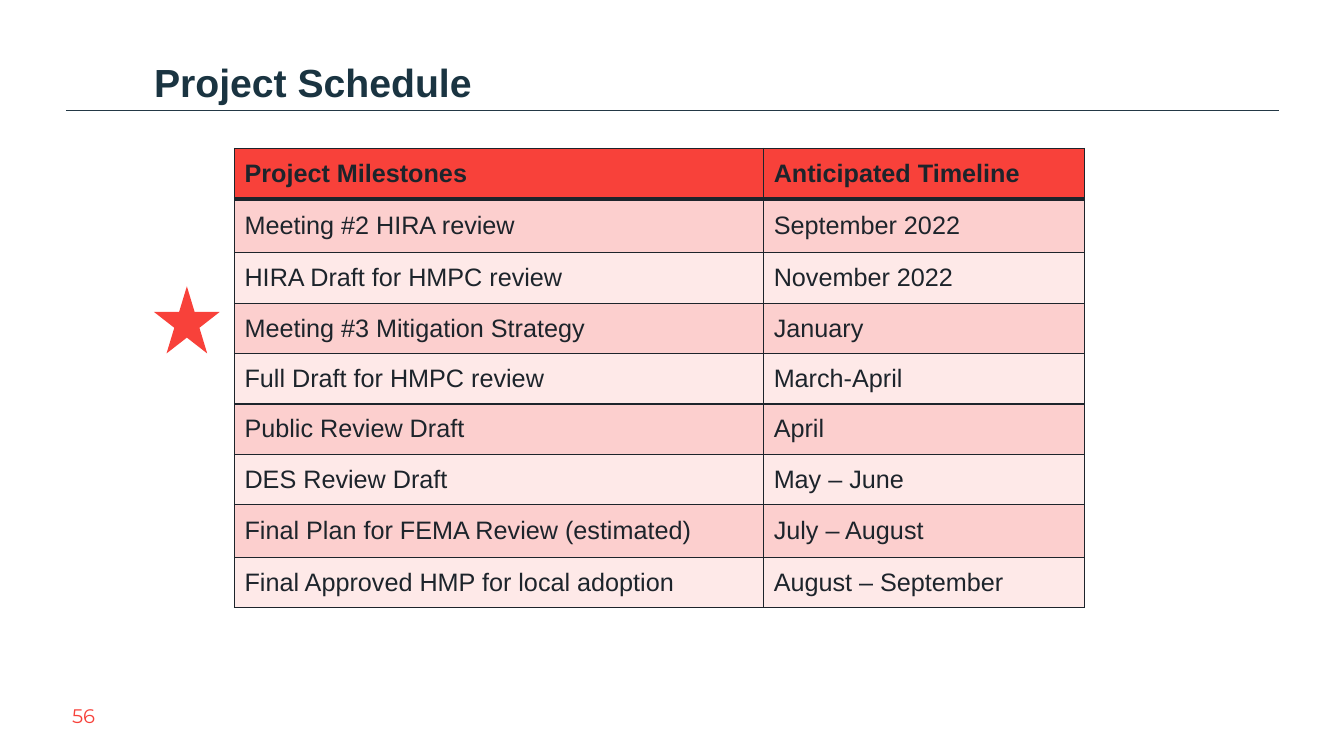
"""Builds the project schedule slide with its milestone table."""
from dataclasses import dataclass

from lxml import etree
from pptx import Presentation
from pptx.dml.color import RGBColor
from pptx.enum.shapes import MSO_CONNECTOR, MSO_SHAPE
from pptx.enum.text import MSO_ANCHOR, MSO_AUTO_SIZE, PP_ALIGN
from pptx.oxml.ns import qn
from pptx.util import Pt

STRAIGHT = MSO_CONNECTOR.STRAIGHT
STAR = MSO_SHAPE.STAR_5_POINT
MIDDLE, BOTTOM = MSO_ANCHOR.MIDDLE, MSO_ANCHOR.BOTTOM
LEFT, CENTER = PP_ALIGN.LEFT, PP_ALIGN.CENTER
NO_FIT = MSO_AUTO_SIZE.NONE

ROWS = [
    ("Project Milestones", "Anticipated Timeline"),
    ("Meeting #2 HIRA review", "September 2022"),
    ("HIRA Draft for HMPC review", "November 2022"),
    ("Meeting #3 Mitigation Strategy", "January"),
    ("Full Draft for HMPC review", "March-April"),
    ("Public Review Draft", "April"),
    ("DES Review Draft", "May – June"),
    ("Final Plan for FEMA Review (estimated)", "July – August"),
    ("Final Approved HMP for local adoption", "August – September"),
]
COL_WIDTHS = [378, 229]
ROW_HEIGHTS = [36, 38.6, 36, 36, 36, 36, 36, 37.6, 36]


@dataclass(frozen=True)
class Theme:
    """Colours, fonts and type sizes of the slide."""
    title: str = "1A3441"
    rule: str = "233845"
    ink: str = "1D242B"
    accent: str = "F8413A"
    number: str = "F7413A"
    bands: tuple = ("FEE9E8", "FCCFCE")
    font: str = "Arial"
    number_font: str = "Montserrat"
    title_size: int = 28
    table_size: int = 18
    number_size: int = 14


class Deck:
    """Draws themed elements on the current slide, measured in points."""

    def __init__(self, prs, theme):
        """Adds a title-only slide."""
        self.t = theme
        self.s = prs.slides.add_slide(prs.slide_layouts[5])

    def run(self, p, text, size, color, font, bold=False):
        """Adds one formatted run to a paragraph."""
        r = p.add_run()
        r.text = text
        r.font.size, r.font.name, r.font.bold = Pt(size), font, bold
        r.font.color.rgb = RGBColor.from_string(color)

    def title(self, text, x, y, w, h):
        """Places and fills the title placeholder."""
        sp = self.s.shapes.title
        sp.left, sp.top, sp.width, sp.height = Pt(x), Pt(y), Pt(w), Pt(h)
        tf = sp.text_frame
        tf.auto_size, tf.word_wrap, tf.vertical_anchor = NO_FIT, True, BOTTOM
        tf.margin_left = tf.margin_top = tf.margin_right = tf.margin_bottom = 0
        p = tf.paragraphs[0]
        p.alignment, p.line_spacing = LEFT, 1.2
        self.run(p, text, self.t.title_size, self.t.title, self.t.font, True)

    def number(self, text, x, y, w, h):
        """Adds the centred slide number."""
        tf = self.s.shapes.add_textbox(Pt(x), Pt(y), Pt(w), Pt(h)).text_frame
        tf.word_wrap, tf.vertical_anchor = True, MIDDLE
        p = tf.paragraphs[0]
        p.alignment = CENTER
        self.run(p, text, self.t.number_size, self.t.number, self.t.number_font)

    def rule(self, x1, x2, y):
        """Adds a thin horizontal line."""
        sp = self.s.shapes.add_connector(STRAIGHT, Pt(x1), Pt(y), Pt(x2), Pt(y))
        sp.line.width = Pt(0.5)
        sp.line.color.rgb = RGBColor.from_string(self.t.rule)
        etree.SubElement(sp.element.spPr, qn("a:effectLst"))

    def star(self, x, y, w, h):
        """Adds the star that marks the current milestone."""
        sp = self.s.shapes.add_shape(STAR, Pt(x), Pt(y), Pt(w), Pt(h))
        sp.shadow.inherit = False
        sp.fill.solid()
        sp.fill.fore_color.rgb = RGBColor.from_string(self.t.accent)
        sp.line.fill.background()

    def borders(self, cell, top, bottom):
        """Draws the four borders of a cell."""
        tc_pr = cell._tc.get_or_add_tcPr()
        for i, (side, w) in enumerate(zip("LRTB", (1, 1, top, bottom))):
            ln = etree.Element(qn(f"a:ln{side}"), w=str(Pt(w)))
            fill = etree.SubElement(ln, qn("a:solidFill"))
            etree.SubElement(fill, qn("a:srgbClr"), val=self.t.ink)
            tc_pr.insert(i, ln)

    def table(self, rows, x, y, widths, heights):
        """Adds the banded table with a heavy line below its header."""
        t = self.t
        table = self.s.shapes.add_table(
            len(rows), len(widths), Pt(x), Pt(y),
            Pt(sum(widths)), Pt(sum(heights))).table
        for col, w in zip(table.columns, widths):
            col.width = Pt(w)
        for i, (texts, h) in enumerate(zip(rows, heights)):
            table.rows[i].height = Pt(h)
            color = t.bands[i % 2] if i else t.accent
            for j, text in enumerate(texts):
                cell = table.cell(i, j)
                cell.vertical_anchor = MIDDLE
                cell.fill.solid()
                cell.fill.fore_color.rgb = RGBColor.from_string(color)
                self.borders(cell, 3 if i == 1 else 1, 3 if i == 0 else 1)
                self.run(cell.text_frame.paragraphs[0], text,
                         t.table_size, t.ink, t.font, i == 0)


def main():
    """Builds and saves the slide."""
    prs = Presentation()
    prs.slide_width, prs.slide_height = Pt(960), Pt(540)
    deck = Deck(prs, Theme())
    deck.number("56", 0, 497, 119.5, 29)
    deck.rule(47, 913.5, 79)
    deck.title("Project Schedule", 110, 27.5, 803.5, 48)
    deck.star(110, 204.5, 47, 48)
    deck.table(ROWS, 167.5, 106, COL_WIDTHS, ROW_HEIGHTS)
    prs.save("out.pptx")


if __name__ == "__main__":
    main()
